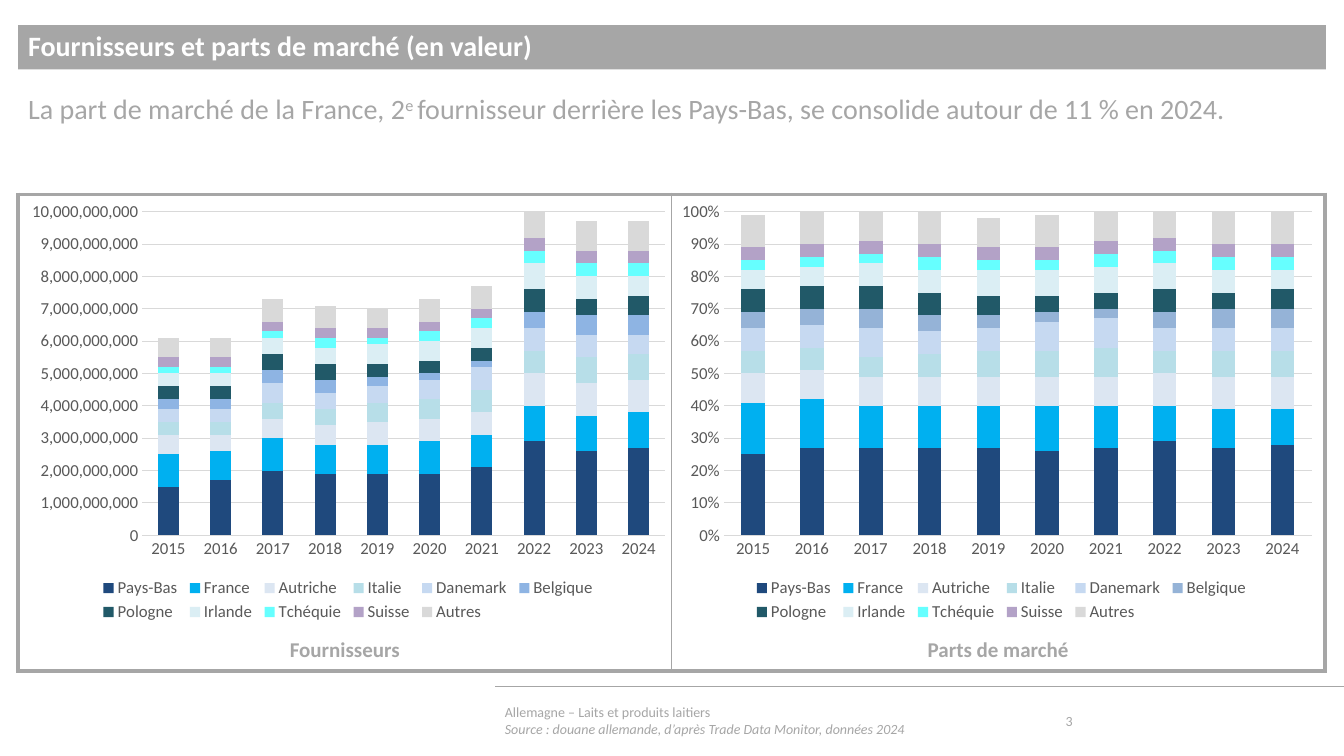
from pptx import Presentation
from pptx.chart.data import CategoryChartData
from pptx.dml.color import RGBColor
from pptx.enum.chart import XL_CHART_TYPE, XL_LEGEND_POSITION, XL_TICK_MARK
from pptx.enum.shapes import MSO_CONNECTOR, MSO_SHAPE
from pptx.enum.text import MSO_ANCHOR, PP_ALIGN
from pptx.oxml import parse_xml
from pptx.oxml.ns import nsdecls
from pptx.oxml.xmlchemy import OxmlElement
from pptx.util import Inches, Pt

GREY, PALE, DARK = "A6A6A6", "D9D9D9", "595959"
YEARS = [str(year) for year in range(2015, 2025)]
BILLION = 10 ** 9
COLORS = {
    "Pays-Bas": "1F497D", "France": "00B0F0", "Autriche": "DCE6F2",
    "Italie": "B7DEE8", "Danemark": "C6D9F1", "Belgique": "8EB4E3",
    "Pologne": "215968", "Irlande": "DBEEF4", "Tchéquie": "66FFFF",
    "Suisse": "B3A2C7", "Autres": PALE,
}
SALES = [
    [15, 17, 20, 19, 19, 19, 21, 29, 26, 27],
    [10, 9, 10, 9, 9, 10, 10, 11, 11, 11],
    [6, 5, 6, 6, 7, 7, 7, 10, 10, 10],
    [4, 4, 5, 5, 6, 6, 7, 7, 8, 8],
    [4, 4, 6, 5, 5, 6, 7, 7, 7, 6],
    [3, 3, 4, 4, 3, 2, 2, 5, 6, 6],
    [4, 4, 5, 5, 4, 4, 4, 7, 5, 6],
    [4, 4, 5, 5, 6, 6, 6, 8, 7, 6],
    [2, 2, 2, 3, 2, 3, 3, 4, 4, 4],
    [3, 3, 3, 3, 3, 3, 3, 4, 4, 4],
    [6, 6, 7, 7, 6, 7, 7, 9, 9, 9],
]
SHARES = [
    [25, 27, 27, 27, 27, 26, 27, 29, 27, 28],
    [16, 15, 13, 13, 13, 14, 13, 11, 12, 11],
    [9, 9, 9, 9, 9, 9, 9, 10, 10, 10],
    [7, 7, 6, 7, 8, 8, 9, 7, 8, 8],
    [7, 7, 9, 7, 7, 9, 9, 7, 7, 7],
    [5, 5, 6, 5, 4, 3, 3, 5, 6, 6],
    [7, 7, 7, 7, 6, 5, 5, 7, 5, 6],
    [6, 6, 7, 7, 8, 8, 8, 8, 7, 6],
    [3, 3, 3, 4, 3, 3, 4, 4, 4, 4],
    [4, 4, 4, 4, 4, 4, 4, 4, 4, 4],
    [10, 10, 10, 10, 9, 10, 9, 9, 10, 10],
]


def rgb(code):
    return RGBColor.from_string(code)


def style(font, size, color, bold=False, italic=False):
    font.name, font.size = "Calibri", Pt(size)
    font.bold, font.italic = bold, italic
    font.color.rgb = rgb(color)


def add_run(para, text, size, color=GREY, bold=False, italic=False):
    run = para.add_run()
    run.text = text
    style(run.font, size, color, bold, italic)
    return run


def add_box(slide, box, anchor=MSO_ANCHOR.TOP):
    frame = slide.shapes.add_textbox(*map(Inches, box)).text_frame
    frame.word_wrap = True
    frame.vertical_anchor = anchor
    return frame


def add_title(slide, box):
    bar = slide.shapes.add_shape(MSO_SHAPE.RECTANGLE, *map(Inches, box))
    bar.shadow.inherit = False
    bar.fill.solid()
    bar.fill.fore_color.rgb = rgb(GREY)
    bar.line.fill.background()
    bar.text_frame.vertical_anchor = MSO_ANCHOR.MIDDLE
    para = bar.text_frame.paragraphs[0]
    para.alignment, para.line_spacing = PP_ALIGN.LEFT, 0.9
    add_run(para, "Fournisseurs et parts de marché (en valeur)", 20, "FFFFFF", True)


def add_lead(slide, box):
    para = add_box(slide, box).paragraphs[0]
    para.line_spacing = 0.9
    add_run(para, "La part de marché de la France, 2", 20)
    add_run(para, "e ", 20).font._element.set("baseline", "30000")
    add_run(para, "fournisseur derrière les Pays-Bas, se consolide autour de 11 % en 2024.", 20)


def add_frame(slide, box):
    table = slide.shapes.add_table(1, 2, *map(Inches, box)).table
    table.first_row = table.horz_banding = False
    for cell, left, right in zip(table.rows[0].cells, (3, 1), (1, 3)):
        props = cell._tc.get_or_add_tcPr()
        for side, width in zip("LRTB", (left, right, 3, 3)):
            props.append(parse_xml(
                f'<a:ln{side} {nsdecls("a")} w="{Pt(width)}"><a:solidFill>'
                f'<a:srgbClr val="{GREY}"/></a:solidFill></a:ln{side}>'))
        cell.fill.background()


def place(element, inner, area):
    layout = element.find("{*}layout")
    if layout is None:
        layout = OxmlElement("c:layout")
        if inner:
            element.insert(0, layout)
        else:
            element.find("{*}legendPos").addnext(layout)
    for child in list(layout):
        layout.remove(child)
    manual = OxmlElement("c:manualLayout")
    layout.append(manual)
    parts = [("layoutTarget", "inner")] if inner else []
    parts += [("xMode", "edge"), ("yMode", "edge"), *zip("xywh", map(str, area))]
    for tag, value in parts:
        part = OxmlElement(f"c:{tag}")
        part.set("val", value)
        manual.append(part)


def add_bars(slide, box, rows, unit, top, form, plot_area, colors):
    data = CategoryChartData(number_format=form)
    data.categories = YEARS
    for name, row in zip(colors, rows):
        data.add_series(name, [value * unit for value in row])
    chart = slide.shapes.add_chart(
        XL_CHART_TYPE.COLUMN_STACKED, *map(Inches, box), data).chart
    chart.has_title = False
    style(chart.font, 12, DARK)
    plot = chart.plots[0]
    plot.gap_width, plot.overlap, plot.vary_by_categories = 150, 100, False
    for series, color in zip(plot.series, colors.values()):
        series.format.fill.solid()
        series.format.fill.fore_color.rgb = rgb(color)
    years, scale = chart.category_axis, chart.value_axis
    for axis in (years, scale):
        axis.major_tick_mark = axis.minor_tick_mark = XL_TICK_MARK.NONE
        style(axis.tick_labels.font, 12, DARK)
    scale.minimum_scale, scale.maximum_scale, scale.major_unit = 0, top, top / 10
    scale.tick_labels.number_format = form
    scale.tick_labels.number_format_is_linked = False
    scale.format.line.fill.background()
    for line in (years.format.line, scale.major_gridlines.format.line):
        line.color.rgb, line.width = rgb(PALE), Pt(0.75)
    chart.has_legend = True
    legend = chart.legend
    legend.position, legend.include_in_layout = XL_LEGEND_POSITION.BOTTOM, False
    style(legend.font, 12, DARK)
    place(chart._chartSpace.chart.plotArea, True, plot_area)
    place(legend._element, False, (0.12, 0.88, 0.77, 0.12))


def add_label(slide, box, text):
    para = add_box(slide, box).paragraphs[0]
    para.alignment = PP_ALIGN.CENTER
    add_run(para, text, 15, bold=True)


def add_foot(slide, box):
    left, top, width, height = box
    rule = slide.shapes.add_connector(
        MSO_CONNECTOR.STRAIGHT, Inches(13.33), Inches(top), Inches(left), Inches(top))
    rule.line.color.rgb, rule.line.width = rgb(GREY), Pt(0.5)
    rule._element.spPr.append(OxmlElement("a:effectLst"))
    note = add_box(slide, (left, top + 0.14, width, height), MSO_ANCHOR.MIDDLE)
    add_run(note.paragraphs[0], "Allemagne – Laits et produits laitiers", 10)
    add_run(note.add_paragraph(),
            "Source : douane allemande, d’après Trade Data Monitor, données 2024",
            10, italic=True)
    page = add_box(slide, (left + 5.56, top + 0.14, 0.99, height), MSO_ANCHOR.MIDDLE)
    add_run(page.paragraphs[0], "3", 10)


def add_panels(slide, box):
    left, top, width, height = box
    half = width / 2
    add_frame(slide, box)
    panels = [
        ("Fournisseurs", SALES, BILLION / 10, 10 * BILLION, "#,##0",
         (0.19, 0.04, 0.8, 0.75), COLORS),
        ("Parts de marché", SHARES, 0.01, 1, "0%",
         (0.08, 0.04, 0.9, 0.75), {**COLORS, "Belgique": "95B3D7"}),
    ]
    for index, (label, *rest) in enumerate(panels):
        start = left + index * half
        add_bars(slide, (start, top, half, 4.28), *rest)
        add_label(slide, (start, top + 4.34, half, 0.35), label)


def main():
    deck = Presentation()
    deck.slide_width, deck.slide_height = Inches(13.33), Inches(7.5)
    slide = deck.slides.add_slide(deck.slide_layouts[6])
    add_title(slide, (0.18, 0.25, 12.97, 0.44))
    add_lead(slide, (0.18, 0.9, 12.96, 0.81))
    add_panels(slide, (0.18, 1.93, 12.96, 4.73))
    add_foot(slide, (4.91, 6.81, 5.43, 0.4))
    deck.save("out.pptx")


if __name__ == "__main__":
    main()
